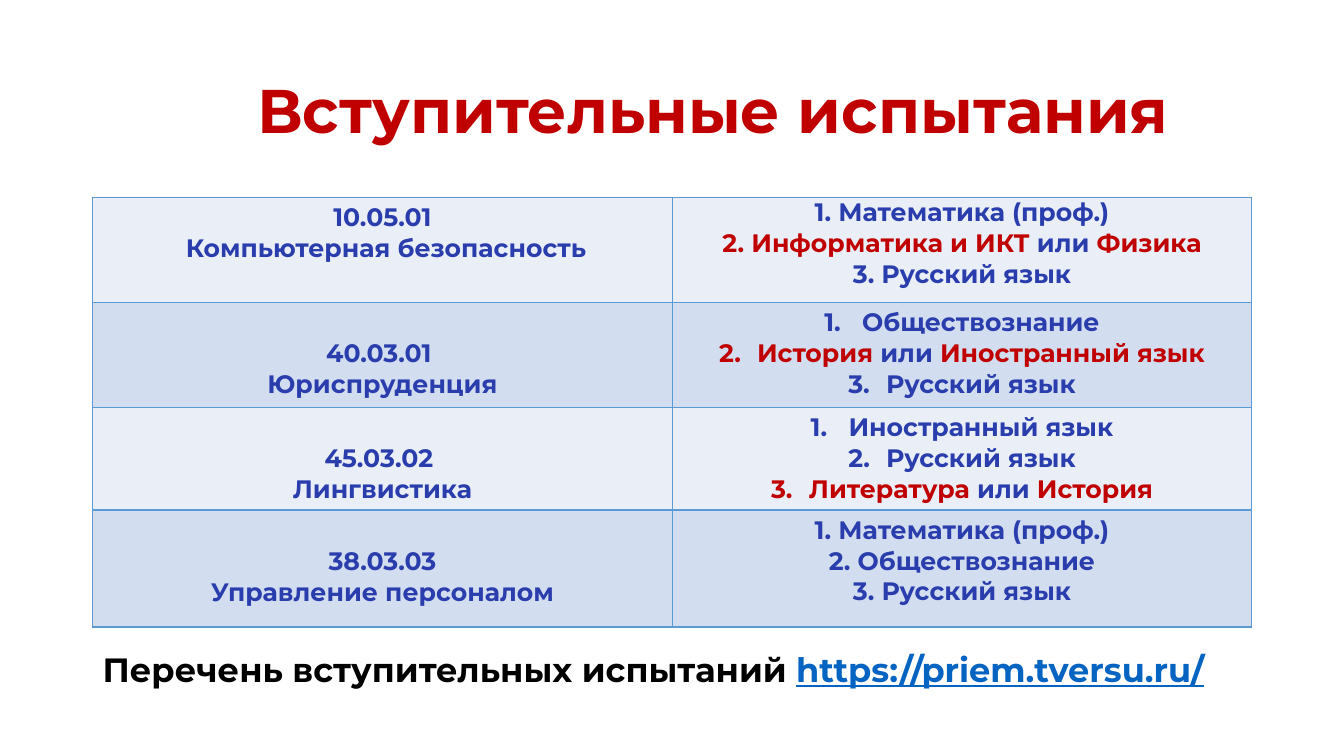
from lxml.etree import SubElement
from pptx import Presentation
from pptx.dml.color import RGBColor
from pptx.enum.text import MSO_ANCHOR, PP_ALIGN
from pptx.oxml.ns import qn
from pptx.util import Pt

RED = RGBColor(0xC0, 0x00, 0x00)
BLUE = RGBColor(0x2A, 0x3D, 0xAD)
LINK = RGBColor(0x05, 0x63, 0xC1)
BLACK = RGBColor(0x00, 0x00, 0x00)
BORDER = RGBColor(0x5B, 0x9B, 0xD5)
BANDS = (RGBColor(0xEA, 0xEF, 0xF7), RGBColor(0xD2, 0xDE, 0xEF))

LINE = 22  # height of one 18 pt table line

# Each row: height, program lines, lines skipped above them,
# exam lines as (text, colour) runs, top margin, number indent (None: typed)
ROWS = [
    (75, ["10.05.01", " Компьютерная безопасность"], 0,
     [[(" Математика (проф.)", BLUE)],
      [(" Информатика и ИКТ ", RED), ("или ", BLUE), ("Физика", RED)],
      [(" Русский язык", BLUE)]], 0, 0),
    (75, ["40.03.01 ", "Юриспруденция"], 1,
     [[("Обществознание", BLUE)],
      [("История ", RED), ("или ", BLUE), ("Иностранный язык", RED)],
      [("Русский язык", BLUE)]], 3.6, 27),
    (73.4, ["45.03.02 ", "Лингвистика"], 1,
     [[("Иностранный язык", BLUE)],
      [("Русский язык", BLUE)],
      [("Литература ", RED), ("или ", BLUE), ("История", RED)]], 3.6, 27),
    (83.5, ["38.03.03", "Управление персоналом"], 1,
     [[("1. Математика (проф.)", BLUE)],
      [("2. Обществознание", BLUE)],
      [("3. Русский язык", BLUE)]], 3.6, None),
]


class SlideBuilder:
    def __init__(self, slide, font="Montserrat"):
        self.slide = slide
        self.font = font

    def run(self, p, text, size, color, underline=False):
        r = p.add_run()
        r.text = text
        r.font.name = self.font
        r.font.size = Pt(size)
        r.font.bold = True
        r.font.underline = underline
        r.font.color.rgb = color

    def title(self, text, x, y, w, h):
        sp = self.slide.shapes.title
        sp.left, sp.top, sp.width, sp.height = Pt(x), Pt(y), Pt(w), Pt(h)
        tf = sp.text_frame
        tf.vertical_anchor = MSO_ANCHOR.MIDDLE
        p = tf.paragraphs[0]
        p.alignment = PP_ALIGN.LEFT
        p.line_spacing = 0.9
        self.run(p, text, 44, RED)

    def text(self, runs, x, y, w, h):
        tf = self.slide.shapes.add_textbox(Pt(x), Pt(y), Pt(w), Pt(h)).text_frame
        tf.word_wrap = True
        for text, color, underline in runs:
            self.run(tf.paragraphs[0], text, 24, color, underline)

    def number(self, p, indent):
        pPr = p._p.get_or_add_pPr()
        pPr.set("marL", str(Pt(indent)))
        pPr.set("indent", str(-Pt(indent)))
        SubElement(pPr, qn("a:buFont"), typeface="+mj-lt")
        SubElement(pPr, qn("a:buAutoNum"), type="arabicPeriod")

    def borders(self, cell):
        tcPr = cell._tc.get_or_add_tcPr()
        for i, side in enumerate(("lnL", "lnR", "lnT", "lnB")):
            ln = tcPr.makeelement(qn(f"a:{side}"), {"w": str(Pt(1))})
            fill = SubElement(ln, qn("a:solidFill"))
            SubElement(fill, qn("a:srgbClr"), val=str(BORDER))
            tcPr.insert(i, ln)

    def cell(self, cell, lines, fill, top, indent=None):
        cell.fill.solid()
        cell.fill.fore_color.rgb = fill
        self.borders(cell)
        cell.margin_top = Pt(top)
        cell.margin_bottom = Pt(min(top, 3.6))
        tf = cell.text_frame
        for i, runs in enumerate(lines):
            p = tf.add_paragraph() if i else tf.paragraphs[0]
            p.alignment = PP_ALIGN.CENTER
            if indent is not None:
                self.number(p, indent)
            for text, color in runs:
                self.run(p, text, 18, color)

    def exam_table(self, x, y, w):
        height = sum(row[0] for row in ROWS)
        table = self.slide.shapes.add_table(
            len(ROWS), 2, Pt(x), Pt(y), Pt(w), Pt(height)).table
        table.first_row = table.horz_banding = False
        for i, (h, program, skipped, exams, top, indent) in enumerate(ROWS):
            table.rows[i].height = Pt(h)
            fill = BANDS[i % 2]
            names = [[(line, BLUE)] for line in program]
            self.cell(table.cell(i, 0), names, fill, 3.6 + skipped * LINE)
            self.cell(table.cell(i, 1), exams, fill, top, indent)


def main():
    prs = Presentation()
    prs.slide_width, prs.slide_height = Pt(960), Pt(540)
    s = SlideBuilder(prs.slides.add_slide(prs.slide_layouts[5]))

    # Heading
    s.title("Вступительные испытания", 176.4, 28.8, 717, 104.4)

    # Programs and their exams
    s.exam_table(66.2, 141, 828)

    # Where to find the full list
    s.text([("Перечень вступительных испытаний ", BLACK, False),
            ("https://priem.tversu.ru/", LINK, True)], 66.2, 460, 819.4, 36)

    prs.save("out.pptx")


if __name__ == "__main__":
    main()
